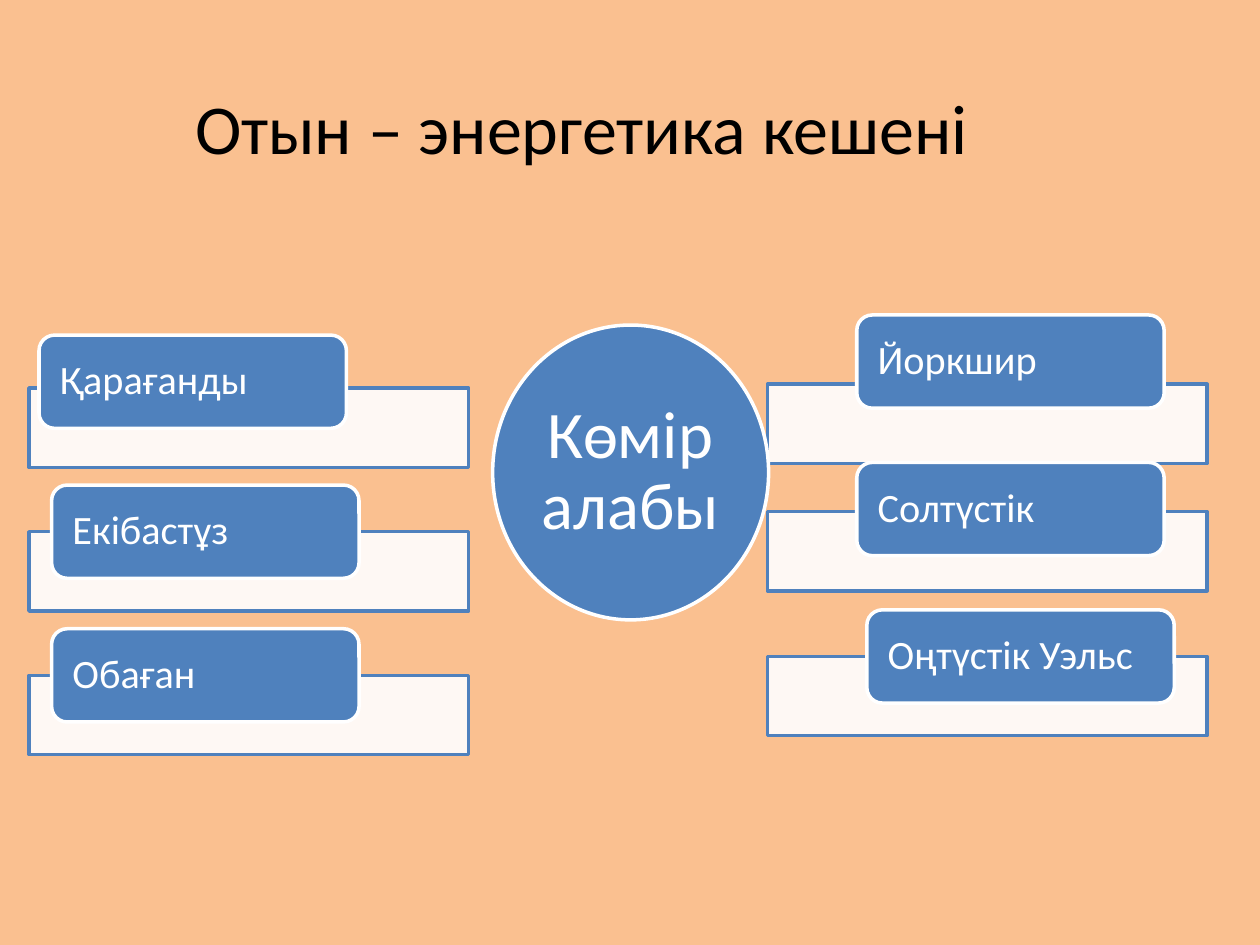
from lxml import etree
from pptx import Presentation
from pptx.dml.color import RGBColor
from pptx.enum import shapes, text
from pptx.oxml.ns import qn
from pptx.util import Inches, Pt

PEACH = RGBColor(0xFA, 0xC0, 0x90)
BLUE = RGBColor(0x4F, 0x81, 0xBD)
WHITE = RGBColor(0xFF, 0xFF, 0xFF)
BLACK = RGBColor(0, 0, 0)

BAR_W, BAR_H = 3.49, 0.63
TAG_W, TAG_H = 2.44, 0.74

# Each column: left edge of its bars, then (label, bar top, tag left, tag top)
COLUMNS = [
    (0.23, [("Қарағанды", 3.08, 0.31, 2.66),
            ("Екібастұз", 4.22, 0.41, 3.85),
            ("Обаған", 5.36, 0.41, 4.99)]),
    (6.09, [("Йоркшир", 3.05, 6.8, 2.5),
            ("Солтүстік", 4.06, 6.8, 3.67),
            ("Оңтүстік Уэльс", 5.21, 6.88, 4.84)]),
]


class Deck:
    font = "Calibri"
    kinds = shapes.MSO_SHAPE

    def __init__(self):
        self.prs = Presentation()
        self.prs.slide_width, self.prs.slide_height = Inches(10), Inches(7.5)
        self.slide = self.prs.slides.add_slide(self.prs.slide_layouts[5])
        fill = self.slide.background.fill
        fill.solid()
        fill.fore_color.rgb = PEACH

    def words(self, frame, line, size, color, align, anchor):
        frame.word_wrap = True
        frame.vertical_anchor = anchor
        par = frame.paragraphs[0]
        par.alignment = align
        run = par.add_run()
        run.text = line
        run.font.name, run.font.size = self.font, Pt(size)
        run.font.color.rgb = color
        return par

    def title(self, line, box):
        holder = self.slide.shapes.title
        holder.left, holder.top, holder.width, holder.height = map(Inches, box)
        self.words(holder.text_frame, line, 40, BLACK,
                   text.PP_ALIGN.CENTER, text.MSO_ANCHOR.TOP)

    def group(self):
        return self.slide.shapes.add_group_shape()

    def shape(self, group, kind, box, fill, edge):
        item = group.shapes.add_shape(kind, *map(Inches, box))
        item.shadow.inherit = False
        item.fill.solid()
        item.fill.fore_color.rgb = fill
        item.line.color.rgb = edge
        item.line.width = Pt(2)
        return item

    def bar(self, group, left, top):
        item = self.shape(group, self.kinds.RECTANGLE,
                          (left, top, BAR_W, BAR_H), WHITE, BLUE)
        # Slightly see-through white
        tint = item.element.spPr.find(qn("a:solidFill"))[0]
        etree.SubElement(tint, qn("a:alpha"), val="90000")

    def label(self, group, kind, box, line, size, align, pad_x, pad_y):
        item = self.shape(group, kind, box, BLUE, WHITE)
        frame = item.text_frame
        frame.margin_left = frame.margin_right = Inches(pad_x)
        frame.margin_top = frame.margin_bottom = Inches(pad_y)
        par = self.words(frame, line, size, WHITE, align,
                         text.MSO_ANCHOR.MIDDLE)
        par.line_spacing = 0.9

    def tag(self, group, left, top, line):
        self.label(group, self.kinds.ROUNDED_RECTANGLE,
                   (left, top, TAG_W, TAG_H), line, 23,
                   text.PP_ALIGN.LEFT, 0.13, 0.04)

    def disc(self, group, box, line):
        self.label(group, self.kinds.OVAL, box, line, 38,
                   text.PP_ALIGN.CENTER, 0.05, 0.05)


def main():
    deck = Deck()
    deck.title("Отын – энергетика кешені", (1.41, 0.62, 6.41, 1.45))

    # Coal basins on both sides
    for left, rows in COLUMNS:
        group = deck.group()
        for line, bar_top, tag_left, tag_top in rows:
            deck.bar(group, left, bar_top)
            deck.tag(group, tag_left, tag_top, line)

    # Hub in the middle
    deck.disc(deck.group(), (3.91, 2.58, 2.19, 2.34), "Көмір алабы")

    deck.prs.save("out.pptx")


if __name__ == "__main__":
    main()
